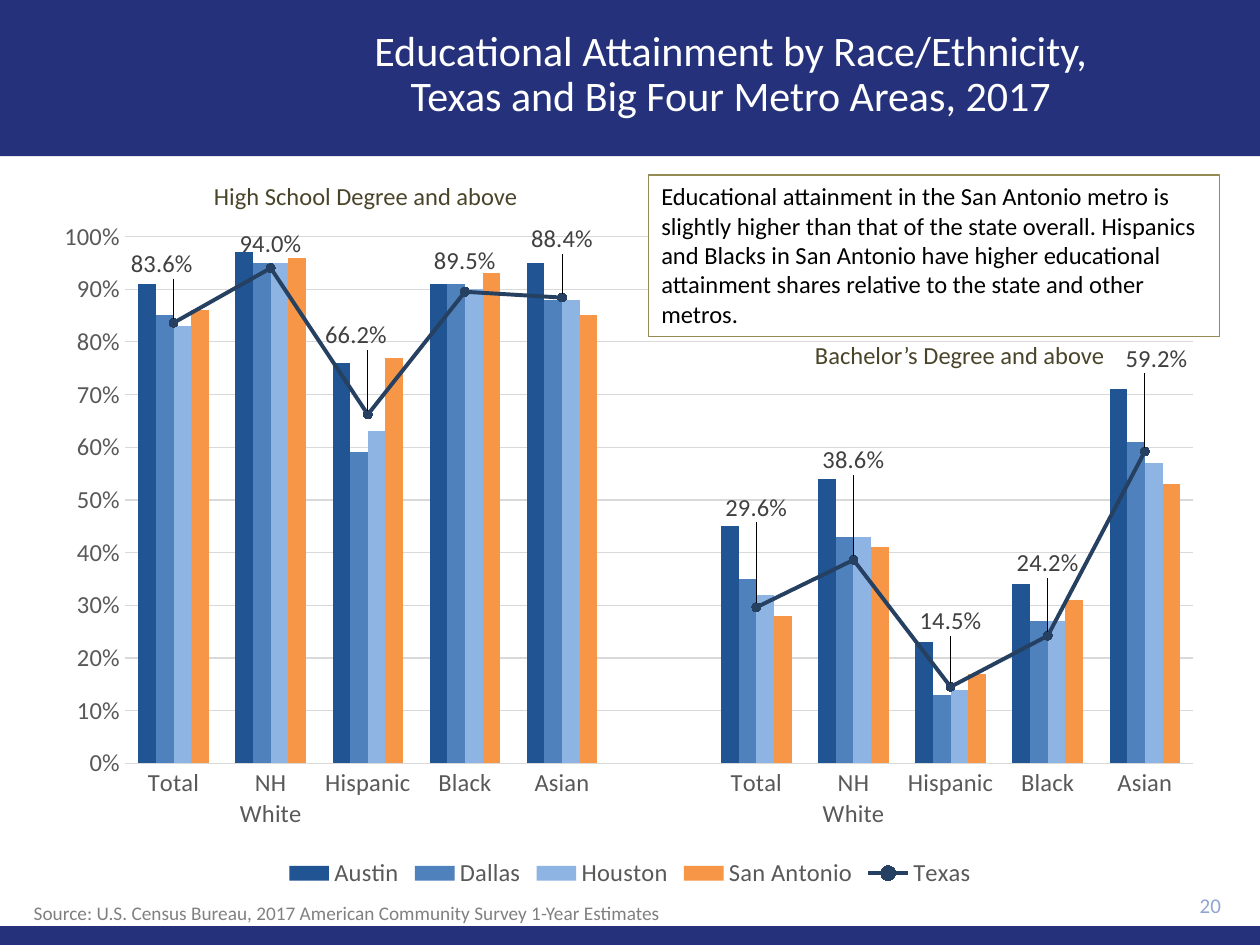
from lxml import etree
from pptx import Presentation
from pptx.chart.data import CategoryChartData
from pptx.dml.color import RGBColor
from pptx.enum import chart as ec, shapes, text
from pptx.oxml import ns, parse_xml
from pptx.util import Pt

COLORS = {
    "navy": "25327B", "white": "FFFFFF", "black": "000000", "page": "8FA5D1",
    "source": "808080", "heading": "4A452A", "border": "948A54", "grid": "D9D9D9",
    "axis": "595959", "label": "404040", "Austin": "205493", "Dallas": "4F81BD",
    "Houston": "8EB4E3", "San Antonio": "F79646", "Texas": "254061",
}
GROUPS = ["Total", "NH White", "Hispanic", "Black", "Asian"]
# Five high school shares, a gap, then five bachelor's shares
SHARES = {
    "Austin": [0.91, 0.97, 0.76, 0.91, 0.95, None, 0.45, 0.54, 0.23, 0.34, 0.71],
    "Dallas": [0.85, 0.95, 0.59, 0.91, 0.88, None, 0.35, 0.43, 0.13, 0.27, 0.61],
    "Houston": [0.83, 0.95, 0.63, 0.90, 0.88, None, 0.32, 0.43, 0.14, 0.27, 0.57],
    "San Antonio": [0.86, 0.96, 0.77, 0.93, 0.85, None, 0.28, 0.41, 0.17, 0.31, 0.53],
    "Texas": [0.836, 0.94, 0.662, 0.895, 0.884, None, 0.296, 0.386, 0.145, 0.242, 0.592],
}
# Label shifts by point, as shares of the chart's width and height
LABEL_SHIFTS = {
    0: (-0.01, -0.05), 2: (-0.01, -0.08), 3: (0, -0.01), 4: (0, -0.05), 6: (0, -0.11),
    7: (0, -0.11), 8: (0, -0.06), 9: (0, -0.07), 10: (0.01, -0.1),
}


def rgb(name):
    return RGBColor.from_string(COLORS[name])


def set_font(font, size, color):
    values = {"name": "Calibri", "size": Pt(size), "bold": False}
    for key, value in values.items():
        setattr(font, key, value)
    font.color.rgb = rgb(color)


def place(shape, box):
    for key, value in zip(("left", "top", "width", "height"), box):
        setattr(shape, key, Pt(value))


def write(shape, wording, size, color, **formats):
    frame = shape.text_frame
    frame.text = wording
    values = {"word_wrap": True, "vertical_anchor": text.MSO_ANCHOR.TOP,
              "auto_size": text.MSO_AUTO_SIZE.NONE}
    for key, value in {**values, **formats}.items():
        setattr(frame, key, value)
    paragraph = frame.paragraphs[0]
    set_font(paragraph.font, size, color)
    return paragraph


def add_rectangle(slide, box, fill):
    shape = slide.shapes.add_shape(shapes.MSO_SHAPE.RECTANGLE, *map(Pt, box))
    shape.shadow.inherit = False
    shape.fill.solid()
    shape.fill.fore_color.rgb = rgb(fill)
    shape.line.fill.background()
    return shape


def add_label(slide, box, wording, size, color, **formats):
    label = slide.shapes.add_textbox(*map(Pt, box))
    return write(label, wording, size, color, **formats)


def add_header(slide, box):
    left, top, width, height = box
    banner = add_rectangle(slide, box, "navy")
    title = slide.shapes.title
    title._element.addprevious(banner._element)
    place(title, (left + 122.4, top + 7.2, width - 129.6, height - 17.28))
    paragraph = write(title, "Educational Attainment by Race/Ethnicity,\v"
                      "Texas and Big Four Metro Areas, 2017", 24, "white",
                      vertical_anchor=text.MSO_ANCHOR.MIDDLE)
    paragraph.alignment = text.PP_ALIGN.CENTER
    paragraph.line_spacing = 0.9


def add_footer(slide, box):
    left, top, width, height = box
    add_rectangle(slide, box, "navy")
    add_label(slide, (left + 12.2, top - 18, 377, 21),
              "Source: U.S. Census Bureau, 2017 American Community Survey 1-Year Estimates",
              11, "source", word_wrap=False)
    page = add_label(slide, (left + width - 79.2, top - 24.5, 64, 24.5), "20", 12, "page",
                     vertical_anchor=text.MSO_ANCHOR.MIDDLE)
    page.alignment = text.PP_ALIGN.RIGHT


def child(parent, tag, **attributes):
    return etree.SubElement(parent, ns.qn(tag), attributes)


def manual_layout(**settings):
    layout = parse_xml(f"<c:layout {ns.nsdecls('c')}/>")
    manual = child(layout, "c:manualLayout")
    for key, value in settings.items():
        child(manual, f"c:{key}", val=str(value))
    return layout


def move_last_to_line(chart):
    """Turn the last column series into a line on the same axes."""
    bars = chart.plots[0]._element
    series = bars.findall(ns.qn("c:ser"))[-1]
    for inversion in series.findall(ns.qn("c:invertIfNegative")):
        series.remove(inversion)
    lines = parse_xml(f"<c:lineChart {ns.nsdecls('c')}/>")
    child(lines, "c:grouping", val="standard")
    child(lines, "c:varyColors", val="0")
    lines.append(series)
    child(lines, "c:marker", val="1")
    for axis in bars.findall(ns.qn("c:axId")):
        child(lines, "c:axId", val=axis.get("val"))
    bars.addnext(lines)


def format_axes(chart):
    for axis in (chart.category_axis, chart.value_axis):
        axis.major_tick_mark = axis.minor_tick_mark = ec.XL_TICK_MARK.NONE
        set_font(axis.tick_labels.font, 14, "axis")
    values = chart.value_axis
    for key, value in {"minimum_scale": 0, "maximum_scale": 1, "major_unit": 0.1,
                       "has_major_gridlines": True}.items():
        setattr(values, key, value)
    values.tick_labels.number_format = "0%"
    values.tick_labels.number_format_is_linked = False
    values.format.line.fill.background()
    for line in (chart.category_axis.format.line, values.major_gridlines.format.line):
        line.color.rgb = rgb("grid")
        line.width = Pt(0.75)


def format_line(series):
    color = rgb(series.name)
    series.smooth = False
    series.format.line.color.rgb = color
    series.format.line.width = Pt(2.25)
    series.marker.style = ec.XL_MARKER_STYLE.CIRCLE
    series.marker.size = 5
    series.marker.format.fill.solid()
    series.marker.format.fill.fore_color.rgb = color
    series.marker.format.line.color.rgb = color
    labels = series.data_labels
    for key, value in {"show_value": True, "number_format": "0.0%",
                       "number_format_is_linked": False,
                       "position": ec.XL_LABEL_POSITION.ABOVE}.items():
        setattr(labels, key, value)
    set_font(labels.font, 14, "label")
    for point in LABEL_SHIFTS:
        label = series.points[point].data_label
        label.position = ec.XL_LABEL_POSITION.ABOVE
        set_font(label.font, 14, "label")
    for element in labels._element.findall(ns.qn("c:dLbl")):
        index = element.find(ns.qn("c:idx"))
        x, y = LABEL_SHIFTS[int(index.get("val"))]
        index.addnext(manual_layout(x=x, y=y))


def add_attainment_chart(slide, box):
    data = CategoryChartData(number_format="0%")
    data.categories = GROUPS + [""] + GROUPS
    for name, shares in SHARES.items():
        data.add_series(name, shares, "0.0%" if name == "Texas" else "0%")
    chart = slide.shapes.add_chart(
        ec.XL_CHART_TYPE.COLUMN_CLUSTERED, *map(Pt, box), data).chart
    set_font(chart.font, 14, "black")
    chart.has_title = False
    chart.has_legend = True
    chart.legend.position = ec.XL_LEGEND_POSITION.BOTTOM
    chart.legend.include_in_layout = False
    set_font(chart.legend.font, 14, "axis")
    format_axes(chart)
    move_last_to_line(chart)
    columns, line = chart.plots
    columns.gap_width, columns.overlap = 150, 0
    columns.vary_by_categories = False
    for series in columns.series:
        series.format.fill.solid()
        series.format.fill.fore_color.rgb = rgb(series.name)
    format_line(line.series[0])
    # Fixed plot area
    area = chart._chartSpace.chart.plotArea
    for old in area.findall(ns.qn("c:layout")):
        area.remove(old)
    area.insert(0, manual_layout(layoutTarget="inner", xMode="edge", yMode="edge",
                                 x=0.07, y=0.04, w=0.91, h=0.77))


def add_finding(slide, box):
    finding = add_rectangle(slide, box, "white")
    finding.line.color.rgb = rgb("border")
    finding.line.width = Pt(0.75)
    paragraph = write(
        finding, "Educational attainment in the San Antonio metro is slightly higher than that "
        "of the state overall. Hispanics and Blacks in San Antonio have higher educational "
        "attainment shares relative to the state and other metros.", 14, "black")
    paragraph.alignment = text.PP_ALIGN.LEFT


def main():
    presentation = Presentation()
    presentation.slide_width, presentation.slide_height = Pt(720), Pt(540)
    slide = presentation.slides.add_slide(presentation.slide_layouts[5])
    add_header(slide, (0, 0, 720, 89.28))
    add_footer(slide, (0, 529.2, 720, 10.8))
    for box, heading in (((115.2, 100, 189.4, 24.5), "High School Degree and above"),
                         ((458.6, 190.8, 181.4, 24.5), "Bachelor’s Degree and above")):
        add_label(slide, box, heading, 14, "heading", word_wrap=False)
    add_attainment_chart(slide, (24.5, 119.5, 671, 391))
    add_finding(slide, (370.8, 100, 326.2, 92.2))
    presentation.save("out.pptx")


if __name__ == "__main__":
    main()
